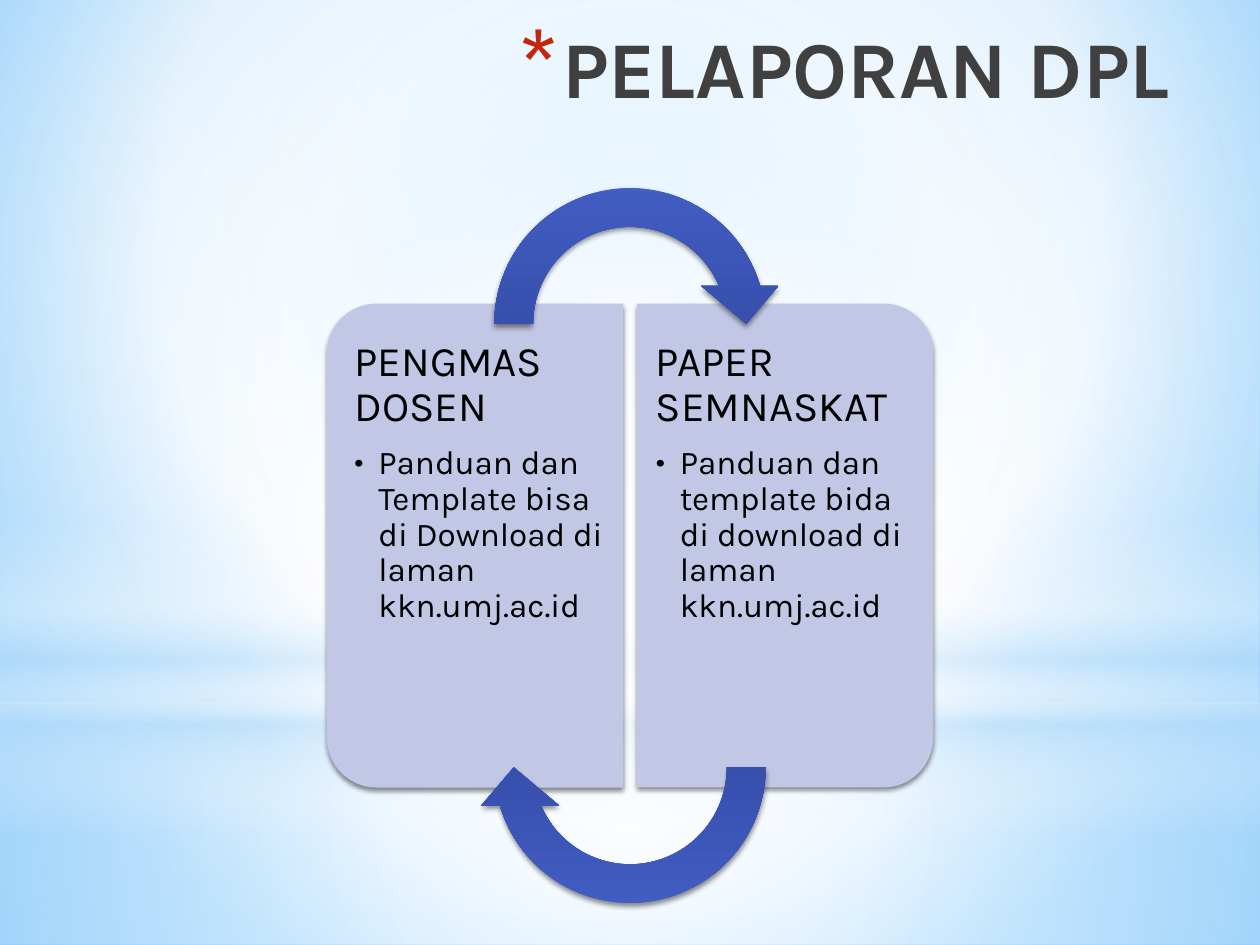
from lxml import etree
from pptx import Presentation
from pptx.dml.color import RGBColor
from pptx.enum.shapes import MSO_SHAPE
from pptx.enum.text import MSO_ANCHOR, MSO_AUTO_SIZE, PP_ALIGN
from pptx.oxml.ns import qn
from pptx.util import Inches, Pt

RECT, ELLIPSE = MSO_SHAPE.RECTANGLE, MSO_SHAPE.OVAL
CARD, ARROW = MSO_SHAPE.ROUND_2_SAME_RECTANGLE, MSO_SHAPE.CIRCULAR_ARROW
TOP, NO_FIT = MSO_ANCHOR.TOP, MSO_AUTO_SIZE.NONE
LEFT, RIGHT = PP_ALIGN.LEFT, PP_ALIGN.RIGHT
COLS, ROWS = 100, 75
CELL = Inches(10) / COLS
FONT = "Karla"
CENTER = (50, 50, 50, 50)


def grid(*cells):
    return [round(c * CELL) for c in cells]


def rgb(color):
    return RGBColor.from_string(color)


def node(parent, tag, **attrs):
    return etree.SubElement(parent, qn(tag), {k: str(v) for k, v in attrs.items()})


def color_node(parent, color, alpha=100):
    clr = node(parent, "a:srgbClr", val=color)
    if alpha < 100:
        node(clr, "a:alpha", val=alpha * 1000)


def gradient(holder, stops, focus=None):
    old = holder.find(qn("a:solidFill"))
    grad = etree.Element(qn("a:gradFill"), rotWithShape="1")
    gs_list = node(grad, "a:gsLst")
    for pos, *color in stops:
        color_node(node(gs_list, "a:gs", pos=pos * 1000), *color)
    if focus:
        path = node(grad, "a:path", path="circle")
        node(path, "a:fillToRect", **{k: v * 1000 for k, v in zip("ltrb", focus)})
    else:
        node(grad, "a:lin", ang=90 * 60000, scaled=0)
    holder.replace(old, grad)


def add_shape(s, kind, box, fill="FFFFFF", rotation=0, adj=(), shadow=False):
    sp = s.shapes.add_shape(kind, *grid(*box))
    sp.rotation = rotation
    for i, value in enumerate(adj):
        sp.adjustments[i] = value
    sp.fill.solid()
    sp.fill.fore_color.rgb = rgb(fill)
    sp.line.fill.background()
    sp.shadow.inherit = False
    if shadow:
        effects = sp.element.spPr.find(qn("a:effectLst"))
        outer = node(effects, "a:outerShdw", blurRad=Pt(3.1), dist=Pt(1.8),
                     dir=90 * 60000, rotWithShape=0)
        color_node(outer, "000000", 45)
    return sp


def write(p, text, size, color="000000", bold=False, align=LEFT, spacing=1, after=0,
          level=0, bullet=None, indent=0, bullet_color=None, bullet_size=100):
    p.alignment, p.line_spacing, p.space_after, p.level = align, spacing, Pt(after), level
    r = p.add_run()
    r.text = text
    r.font.name, r.font.size, r.font.bold = FONT, Pt(size), bold
    r.font.color.rgb = rgb(color)
    if bullet:
        pPr = p._p.get_or_add_pPr()
        pPr.set("marL", str(Inches(indent)))
        pPr.set("indent", str(-Inches(indent)))
        color_node(node(pPr, "a:buClr"), bullet_color or color)
        node(pPr, "a:buSzPct", val=bullet_size * 1000)
        node(pPr, "a:buFont", typeface=FONT)
        node(pPr, "a:buChar", char=bullet)


def backdrop(s):
    s.background.fill.solid()
    gradient(s.element.find(".//" + qn("p:bgPr")),
             [(0, "9ED5FF"), (60, "FFFFFF"), (100, "5BB9FF")], (20, 10, 20, 60))
    horizon = 55.8
    layers = [
        (RECT, (0, horizon, COLS, ROWS - horizon), CENTER,
         [(0, "FFFFFF", 91), (37, "FFFFFF", 76), (100, "B4DCFA", 79)]),
        (RECT, (0, 0, COLS, horizon), CENTER,
         [(0, "FFFFFF", 89), (48, "FFFFFF", 62), (100, "B4DCFA", 79)]),
        (RECT, (0, 41.2, COLS, 25), None,
         [(0, "FFFFFF", 0), (29, "FFFFFF", 30), (45, "B4DCFA", 40),
          (55, "FFFFFF", 26), (65, "B4DCFA", 60), (100, "FFFFFF", 0)]),
        (ELLIPSE, (0, 17.5, COLS, 55.8), CENTER, [(0, "FFFFFF"), (56, "FFFFFF", 0)]),
    ]
    for kind, box, focus, stops in layers:
        gradient(add_shape(s, kind, box).element.spPr, stops, focus)


def heading(s, box, text):
    title = s.shapes.title
    title.element.getparent().append(title.element)
    title.left, title.top, title.width, title.height = grid(*box)
    tf = title.text_frame
    tf.word_wrap, tf.auto_size, tf.vertical_anchor = True, NO_FIT, TOP
    write(tf.paragraphs[0], text, 46, "404040", True, RIGHT, bullet="*", indent=0.35,
          bullet_color="C3260C", bullet_size=128)


def card(s, box, head, detail, on_left):
    x, y, w, h = box
    turned = (x + (w - h) / 2, y + (h - w) / 2, h, w)
    add_shape(s, CARD, turned, "C2C7E6", 270 if on_left else 90, (0.167, 0), True)
    pad = 1.2
    tb = s.shapes.add_textbox(*grid(x + pad * on_left, y + pad, w - pad, h - 2 * pad))
    tf = tb.text_frame
    tf.word_wrap, tf.auto_size, tf.vertical_anchor = True, NO_FIT, TOP
    tf.margin_left, tf.margin_right = grid(*((1, 1.5) if on_left else (1.5, 1)))
    tf.margin_top = tf.margin_bottom = Inches(0.17)
    write(tf.paragraphs[0], head, 24, spacing=0.9, after=8.4)
    write(tf.add_paragraph(), detail, 19, spacing=0.9, after=2.85, level=1,
          bullet="•", indent=0.19)


def cycle(s, box, cards):
    x, y, w, h = box
    gap, size = 1.1, 24.6
    card_w = (w - gap) / 2
    for i, (head, detail) in enumerate(cards):
        card(s, (x + i * (card_w + gap), y, card_w, h), head, detail, i == 0)
    for top, rotation in ((y - 10.7, 0), (y + h + 10.7 - size, 180)):
        arrow = add_shape(s, ARROW, (x + (w - size) / 2, top, size, size), "435EC5",
                          rotation, (0.125, 11.42, 204.58, 108, 0.125), True)
        gradient(arrow.element.spPr, [(0, "435EC5"), (100, "2B4092")])


def main():
    prs = Presentation()
    prs.slide_width, prs.slide_height = grid(COLS, ROWS)
    s = prs.slides.add_slide(prs.slide_layouts[5])
    backdrop(s)
    heading(s, (22.6, 0.9, 71.2, 12.5), "PELAPORAN DPL")
    cycle(s, (25.95, 24.1, 48.1, 38.4), [
        ("PENGMAS DOSEN", "Panduan dan Template bisa di Download di laman kkn.umj.ac.id"),
        ("PAPER SEMNASKAT", "Panduan dan template bida di download di laman kkn.umj.ac.id"),
    ])
    prs.save("out.pptx")


if __name__ == "__main__":
    main()
